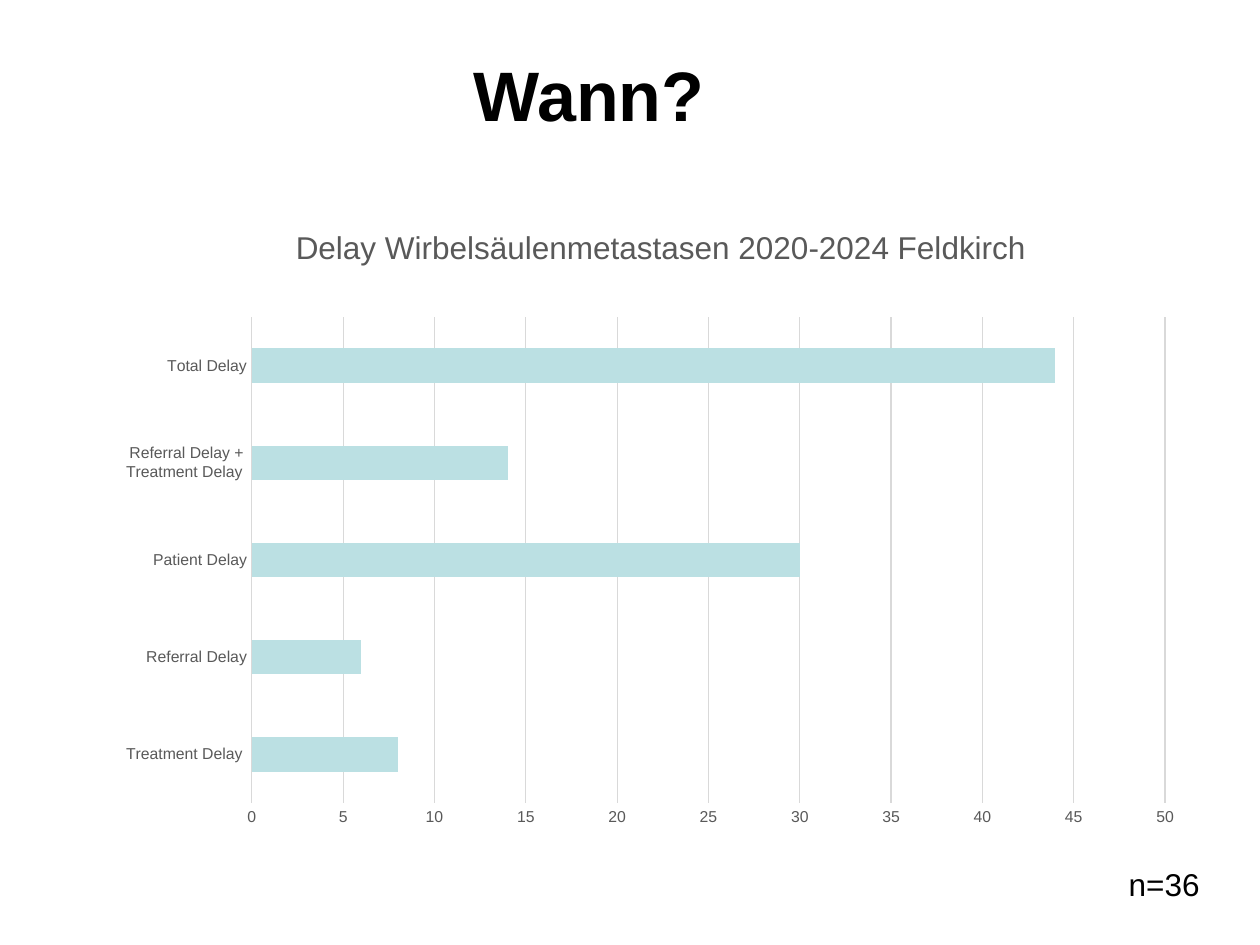
from lxml import etree
from pptx import Presentation
from pptx import util as u
from pptx.chart import data as chart_data
from pptx.dml.color import RGBColor
from pptx.enum import chart as ch, text
from pptx.oxml import ns

BLACK = RGBColor(0x00, 0x00, 0x00)
GREY = RGBColor(0x59, 0x59, 0x59)
GRID = RGBColor(0xD9, 0xD9, 0xD9)
TEAL = RGBColor(0xBB, 0xE0, 0xE3)
FONT = "Arial"
DELAYS = {
    "Treatment Delay ": 8,
    "Referral Delay": 6,
    "Patient Delay": 30,
    "Referral Delay + Treatment Delay ": 14,
    "Total Delay": 44,
}


def inches(*lengths):
    """Turn plain numbers into lengths."""
    return [u.Inches(length) for length in lengths]


def style(font, size, color, bold=False):
    """Apply the slide font in one size and colour."""
    font.name, font.size, font.bold = FONT, u.Pt(size), bold
    font.color.rgb = color


def fill_text(shape, box, words, size, bold=False):
    """Place a shape in its box and set its single line of text."""
    shape.left, shape.top, shape.width, shape.height = inches(*box)
    frame = shape.text_frame
    frame.text = words
    frame.word_wrap = False
    frame.auto_size = text.MSO_AUTO_SIZE.SHAPE_TO_FIT_TEXT
    frame.vertical_anchor = text.MSO_ANCHOR.TOP
    line = frame.paragraphs[0]
    line.alignment = text.PP_ALIGN.LEFT
    style(line.font, size, BLACK, bold)


def set_layout(parent, follows, **settings):
    """Fix a chart part at fractions of the chart area."""
    for old in parent.findall(ns.qn("c:layout")):
        parent.remove(old)
    layout = etree.Element(ns.qn("c:layout"))
    manual = etree.SubElement(layout, ns.qn("c:manualLayout"))
    for tag, value in settings.items():
        etree.SubElement(manual, ns.qn(f"c:{tag}")).set("val", str(value))
    if follows is None:
        parent.insert(0, layout)
    else:
        follows.addnext(layout)


def style_axis(axis):
    """Give an axis small grey labels without ticks."""
    axis.major_tick_mark = axis.minor_tick_mark = ch.XL_TICK_MARK.NONE
    style(axis.tick_labels.font, 9, GREY)


def add_delay_chart(slide, box):
    """Add the bar chart of delays."""
    delays = chart_data.CategoryChartData()
    delays.categories = list(DELAYS)
    delays.add_series("Series 1", list(DELAYS.values()))
    chart = slide.shapes.add_chart(
        ch.XL_CHART_TYPE.BAR_CLUSTERED, *inches(*box), delays
    ).chart
    style(chart.font, 10, BLACK)
    chart.has_legend = False

    heading = chart.chart_title
    heading.text_frame.text = "Delay Wirbelsäulenmetastasen 2020-2024 Feldkirch"
    style(heading.text_frame.paragraphs[0].font, 18, GREY)
    heading.include_in_layout = False
    title_xml = chart._chartSpace.chart.find(ns.qn("c:title"))
    set_layout(title_xml, title_xml.find(ns.qn("c:tx")),
               xMode="edge", yMode="edge", x=0.17, y=0.04)
    set_layout(chart._chartSpace.chart.plotArea, None, layoutTarget="inner",
               xMode="edge", yMode="edge", x=0.135, y=0.189, w=0.837, h=0.753)

    plot = chart.plots[0]
    plot.gap_width = 182
    plot.vary_by_categories = False
    bars = plot.series[0].format.fill
    bars.solid()
    bars.fore_color.rgb = TEAL

    style_axis(chart.category_axis)
    style_axis(chart.value_axis)
    chart.value_axis.minimum_scale = 0
    chart.value_axis.maximum_scale = 50
    chart.value_axis.major_unit = 5
    chart.value_axis.format.line.fill.background()
    for line in (chart.category_axis.format.line,
                 chart.value_axis.major_gridlines.format.line):
        line.color.rgb = GRID
        line.width = u.Pt(0.75)


def main():
    """Build and save the slide."""
    deck = Presentation()
    deck.slide_width, deck.slide_height = inches(10, 7.5)
    slide = deck.slides.add_slide(deck.slide_layouts[5])
    fill_text(slide.shapes.title, (3.66, 0.36, 2.68, 0.77), "Wann?", 40, True)
    add_delay_chart(slide, (0.83, 1.55, 8.66, 5.12))
    sample_box = (8.86, 6.82, 0.93, 0.4)
    sample_size = slide.shapes.add_textbox(*inches(*sample_box))
    fill_text(sample_size, sample_box, "n=36", 18)
    deck.save("out.pptx")


if __name__ == "__main__":
    main()
